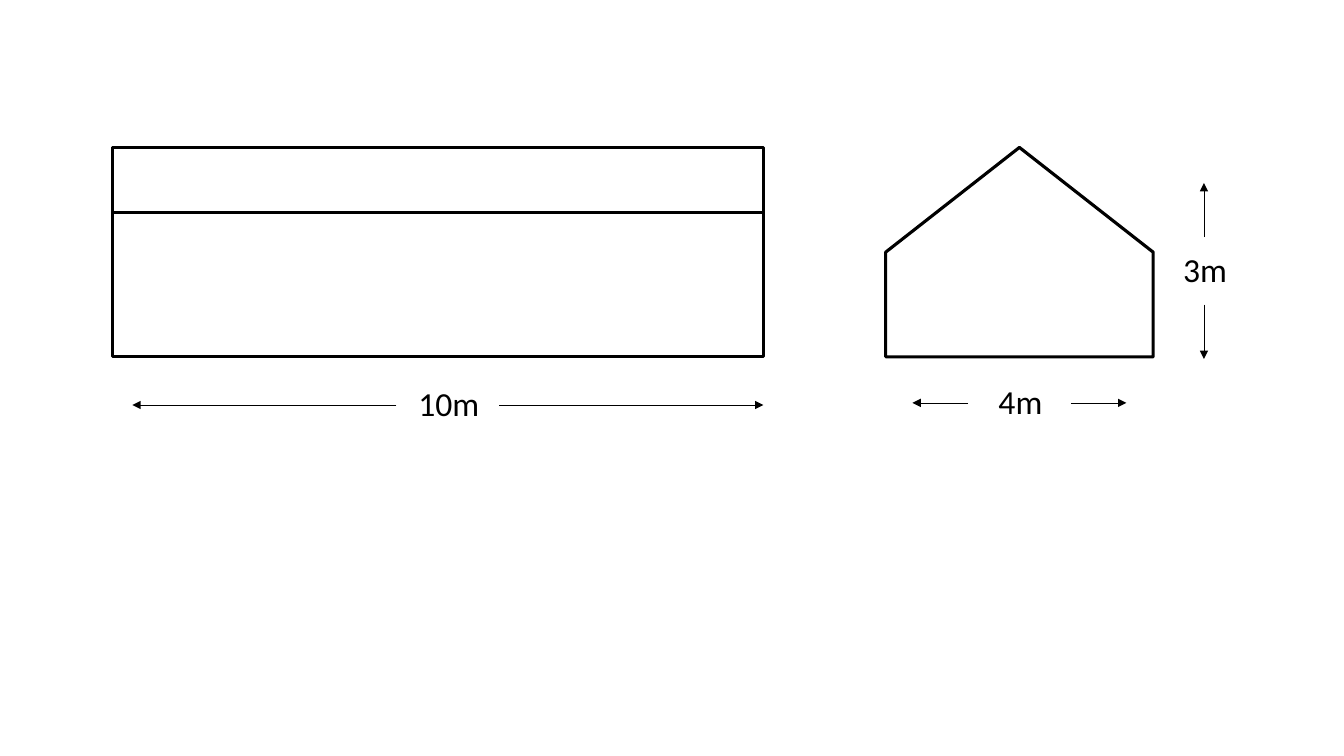
from lxml import etree
from pptx import Presentation
from pptx.dml.color import RGBColor
from pptx.enum.shapes import MSO_CONNECTOR, MSO_SHAPE
from pptx.enum.text import PP_ALIGN
from pptx.oxml.ns import qn
from pptx.util import Inches, Pt

BLACK = RGBColor(0x00, 0x00, 0x00)
WHITE = RGBColor(0xFF, 0xFF, 0xFF)
RECTANGLE = MSO_SHAPE.RECTANGLE
PENTAGON = MSO_SHAPE.PENTAGON
STRAIGHT = MSO_CONNECTOR.STRAIGHT
CENTER = PP_ALIGN.CENTER

SLIDE_WIDTH, SLIDE_HEIGHT = 13.33, 7.5
FONT = "Calibri"
WALL_WEIGHT, ARROW_WEIGHT = 2.25, 0.5
LABEL_WIDTH, LABEL_HEIGHT = 1.38, 0.59
GAP_ACROSS, GAP_UPRIGHT = 1.02, 0.67

# Building outlines in inches: left, top, width, height
BUILDING_TOP, BUILDING_HEIGHT = 0.195 * SLIDE_HEIGHT, 0.277 * SLIDE_HEIGHT
SIDE_BOX = (0.084 * SLIDE_WIDTH, BUILDING_TOP, 0.484 * SLIDE_WIDTH, BUILDING_HEIGHT)
GABLE_BOX = (0.659 * SLIDE_WIDTH, BUILDING_TOP, 0.199 * SLIDE_WIDTH, BUILDING_HEIGHT)


def point_in(box, across, down):
    """Turn shares of a box into a point in inches."""
    left, top, width, height = box
    return left + across * width, top + down * height


def add_outline(slide, kind, left, top, width, height):
    shape = slide.shapes.add_shape(
        kind, Inches(left), Inches(top), Inches(width), Inches(height))
    shape.shadow.inherit = False
    shape.fill.solid()
    shape.fill.fore_color.rgb = WHITE
    shape.line.color.rgb = BLACK
    shape.line.width = Pt(WALL_WEIGHT)
    return shape


def add_line(slide, start, end, weight, arrow=False):
    line = slide.shapes.add_connector(
        STRAIGHT, *(Inches(value) for value in (*start, *end)))
    line.line.color.rgb = BLACK
    line.line.width = Pt(weight)
    properties = line._element.spPr
    if arrow:
        etree.SubElement(properties.find(qn("a:ln")), qn("a:tailEnd"), type="triangle")
    etree.SubElement(properties, qn("a:effectLst"))


def add_label(slide, text, center_x, center_y):
    label = slide.shapes.add_textbox(
        Inches(center_x - LABEL_WIDTH / 2), Inches(center_y - LABEL_HEIGHT / 2),
        Inches(LABEL_WIDTH), Inches(LABEL_HEIGHT))
    label.text_frame.word_wrap = True
    label.text_frame.text = text
    paragraph = label.text_frame.paragraphs[0]
    paragraph.alignment = CENTER
    font = paragraph.runs[0].font
    font.name = FONT
    font.size = Pt(24)
    font.color.rgb = BLACK


def add_dimension(slide, text, start, end):
    """Label midway between two arrows that point outwards to start and end."""
    middle_x, middle_y = (start[0] + end[0]) / 2, (start[1] + end[1]) / 2
    upright = start[0] == end[0]
    reach_x = 0 if upright else GAP_ACROSS / 2
    reach_y = GAP_UPRIGHT / 2 if upright else 0
    add_label(slide, text, middle_x + 0.01, middle_y + 0.03)
    for tip, side in ((start, -1), (end, 1)):
        inner = (middle_x + side * reach_x, middle_y + side * reach_y)
        add_line(slide, inner, tip, ARROW_WEIGHT, arrow=True)


def draw_side_view(slide, box):
    add_outline(slide, RECTANGLE, *box)
    # Eaves line between roof and wall
    add_line(slide, point_in(box, 0, 0.31), point_in(box, 1, 0.31), WALL_WEIGHT)
    add_dimension(slide, "10m", point_in(box, 0.03, 1.23), point_in(box, 1, 1.23))


def draw_gable_view(slide, box):
    # The pentagon points right, so it is laid out sideways and turned upwards
    _, _, width, height = box
    center_x, center_y = point_in(box, 0.5, 0.5)
    gable = add_outline(
        slide, PENTAGON, center_x - height / 2, center_y - width / 2, height, width)
    gable.rotation = 270
    add_dimension(slide, "4m", point_in(box, 0.1, 1.22), point_in(box, 0.9, 1.22))
    add_dimension(slide, "3m", point_in(box, 1.19, 0.17), point_in(box, 1.19, 1.01))


def main():
    presentation = Presentation()
    presentation.slide_width = Inches(SLIDE_WIDTH)
    presentation.slide_height = Inches(SLIDE_HEIGHT)
    slide = presentation.slides.add_slide(presentation.slide_layouts[6])
    draw_side_view(slide, SIDE_BOX)
    draw_gable_view(slide, GABLE_BOX)
    presentation.save("out.pptx")


if __name__ == "__main__":
    main()
